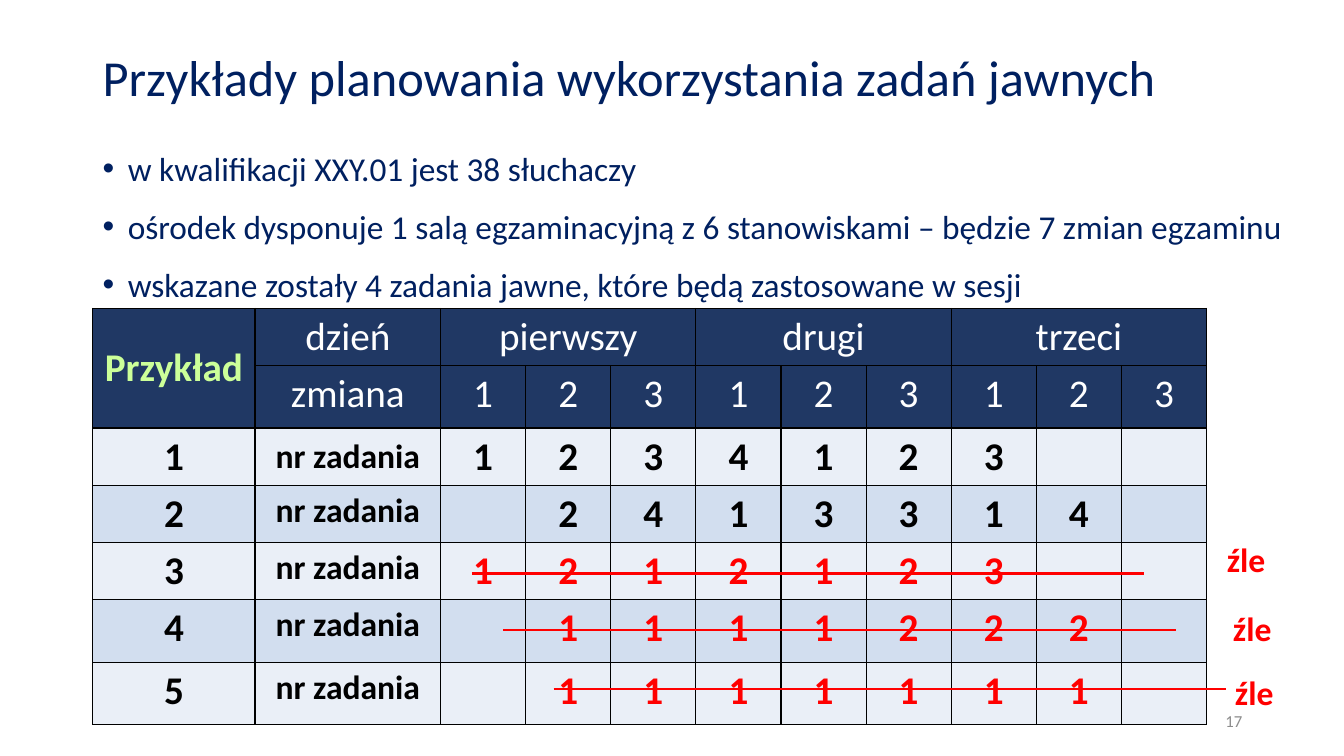
"""Builds the slide with examples of planning the use of public exam tasks."""
from dataclasses import dataclass

from lxml.etree import SubElement
from pptx import Presentation
from pptx.dml.color import RGBColor
from pptx.enum.shapes import MSO_CONNECTOR
from pptx.enum.text import MSO_ANCHOR, PP_ALIGN
from pptx.oxml import parse_xml
from pptx.oxml.ns import nsdecls, qn
from pptx.util import Inches, Pt

TITLE = "Przykłady planowania wykorzystania zadań jawnych"
FACTS = [
    "w kwalifikacji XXY.01 jest 38 słuchaczy",
    "ośrodek dysponuje 1 salą egzaminacyjną z 6 stanowiskami – będzie 7 zmian egzaminu",
    "wskazane zostały 4 zadania jawne, które będą zastosowane w sesji",
]
CORNER, DAY, SHIFT, TASK = "Przykład", "dzień", "zmiana", "nr zadania"
DAYS = ["pierwszy", "drugi", "trzeci"]
SHIFTS = ["1", "2", "3"]
PLANS = ["1234123  ", " 2413314 ", "1212123  ", " 1111222 ", " 1111111 "]
WRONG = "źle"
STRIKES = {
    2: {"line": (4.68, 5.69), "mark": (12.07, 5.3)},
    3: {"line": (4.99, 6.25), "mark": (12.13, 5.98)},
    4: {"line": (5.49, 6.84), "mark": (12.15, 6.62)},
}
STRIKE_LENGTH = 6.67
PAGE = "17"


@dataclass(frozen=True)
class Theme:
    font: str = "Calibri"
    navy: str = "002060"
    header: str = "203864"
    lime: str = "CCFF99"
    white: str = "FFFFFF"
    black: str = "000000"
    red: str = "FF0000"
    gray: str = "8C8C8C"
    bands: tuple = ("EAEFF7", "D2DEEF")
    title: float = 36
    body: float = 23.8
    digit: float = 28
    label: float = 24
    page: float = 12


THEME = Theme()
TABLE_LEFT, TABLE_TOP, TABLE_WIDTH = 0.92, 3.06, 11.05
LEAD_WIDTHS = [1.61, 1.84]
SHIFT_COUNT = len(DAYS) * len(SHIFTS)
SHIFT_WIDTH = (TABLE_WIDTH - sum(LEAD_WIDTHS)) / SHIFT_COUNT
COLUMN_WIDTHS = LEAD_WIDTHS + [SHIFT_WIDTH] * SHIFT_COUNT
ROW_HEIGHTS = [0.56, 0.62, 0.56, 0.56, 0.56, 0.62, 0.62]


def style(paragraph, size, color, bold=False, align=PP_ALIGN.LEFT):
    paragraph.alignment = align
    for run in paragraph.runs:
        run.font.name = THEME.font
        run.font.size = Pt(size)
        run.font.bold = bold
        run.font.color.rgb = RGBColor.from_string(color)


def add_text(slide, box, lines, size, color, bold=False, align=PP_ALIGN.LEFT,
             anchor=MSO_ANCHOR.TOP):
    frame = slide.shapes.add_textbox(*map(Inches, box)).text_frame
    frame.word_wrap = True
    frame.vertical_anchor = anchor
    frame.text = "\n".join(lines)
    for paragraph in frame.paragraphs:
        style(paragraph, size, color, bold, align)
    return frame


def add_bullet(paragraph):
    paragraph.line_spacing = 1.1
    paragraph.space_before = Pt(10)
    properties = paragraph._p.get_or_add_pPr()
    properties.set("marL", str(Inches(0.25)))
    properties.set("indent", str(-Inches(0.25)))
    SubElement(properties, qn("a:buFont")).set("typeface", "Arial")
    SubElement(properties, qn("a:buChar")).set("char", "•")


def paint_cell(cell, fill):
    cell.fill.solid()
    cell.fill.fore_color.rgb = RGBColor.from_string(fill)
    properties = cell._tc.get_or_add_tcPr()
    for index, side in enumerate("LRTB"):
        properties.insert(index, parse_xml(
            f'<a:ln{side} {nsdecls("a")} w="12700"><a:solidFill>'
            f'<a:srgbClr val="{THEME.black}"/></a:solidFill></a:ln{side}>'))


def write_cell(cell, text, size, color, bold=True, anchor=MSO_ANCHOR.TOP):
    cell.text = text
    cell.vertical_anchor = anchor
    style(cell.text_frame.paragraphs[0], size, color, bold, PP_ALIGN.CENTER)


def add_plan_table(slide):
    table = slide.shapes.add_table(
        len(ROW_HEIGHTS), len(COLUMN_WIDTHS), Inches(TABLE_LEFT), Inches(TABLE_TOP),
        Inches(TABLE_WIDTH), Inches(sum(ROW_HEIGHTS))).table
    for column, width in zip(table.columns, COLUMN_WIDTHS):
        column.width = Inches(width)
    for index, (row, height) in enumerate(zip(table.rows, ROW_HEIGHTS)):
        row.height = Inches(height)
        for cell in row.cells:
            paint_cell(cell, THEME.header if index < 2 else THEME.bands[index % 2])

    lead, step = len(LEAD_WIDTHS), len(SHIFTS)
    table.cell(0, 0).merge(table.cell(1, 0))
    write_cell(table.cell(0, 0), CORNER, THEME.digit, THEME.lime, anchor=MSO_ANCHOR.MIDDLE)
    headings = {(0, 1): DAY, (1, 1): SHIFT}
    for day_index, day in enumerate(DAYS):
        first = lead + day_index * step
        table.cell(0, first).merge(table.cell(0, first + step - 1))
        headings[0, first] = day
        headings.update({(1, first + i): shift for i, shift in enumerate(SHIFTS)})
    for position, heading in headings.items():
        write_cell(table.cell(*position), heading, THEME.digit, THEME.white, bold=False)

    for index, plan in enumerate(PLANS):
        row = index + 2
        write_cell(table.cell(row, 0), str(index + 1), THEME.digit, THEME.black)
        write_cell(table.cell(row, 1), TASK, THEME.label, THEME.black,
                   anchor=MSO_ANCHOR.TOP if index else MSO_ANCHOR.MIDDLE)
        for column, task in enumerate(plan, lead):
            if task.strip():
                write_cell(table.cell(row, column), task, THEME.digit,
                           THEME.red if index in STRIKES else THEME.black)


def add_strike(slide, line, mark):
    x, y = line
    strike = slide.shapes.add_connector(
        MSO_CONNECTOR.STRAIGHT, Inches(x), Inches(y), Inches(x + STRIKE_LENGTH), Inches(y))
    strike.line.color.rgb = RGBColor.from_string(THEME.red)
    strike.line.width = Pt(1.5)
    SubElement(strike._element.spPr, qn("a:effectLst"))
    add_text(slide, (*mark, 0.69, 0.5), [WRONG], THEME.label, THEME.red, bold=True)


def main():
    deck = Presentation()
    deck.slide_width, deck.slide_height = Inches(13.33), Inches(7.5)
    slide = deck.slides.add_slide(deck.slide_layouts[6])
    title = add_text(slide, (0.92, 0.4, 11.5, 0.79), [TITLE], THEME.title, THEME.navy,
                     anchor=MSO_ANCHOR.MIDDLE)
    title.paragraphs[0].line_spacing = 0.9
    facts = add_text(slide, (0.92, 1.38, 12.07, 1.74), FACTS, THEME.body, THEME.navy)
    for paragraph in facts.paragraphs:
        add_bullet(paragraph)
    add_text(slide, (9.42, 6.95, 3, 0.4), [PAGE], THEME.page, THEME.gray,
             align=PP_ALIGN.RIGHT, anchor=MSO_ANCHOR.MIDDLE)
    add_plan_table(slide)
    for strike in STRIKES.values():
        add_strike(slide, **strike)
    deck.save("out.pptx")


if __name__ == "__main__":
    main()
